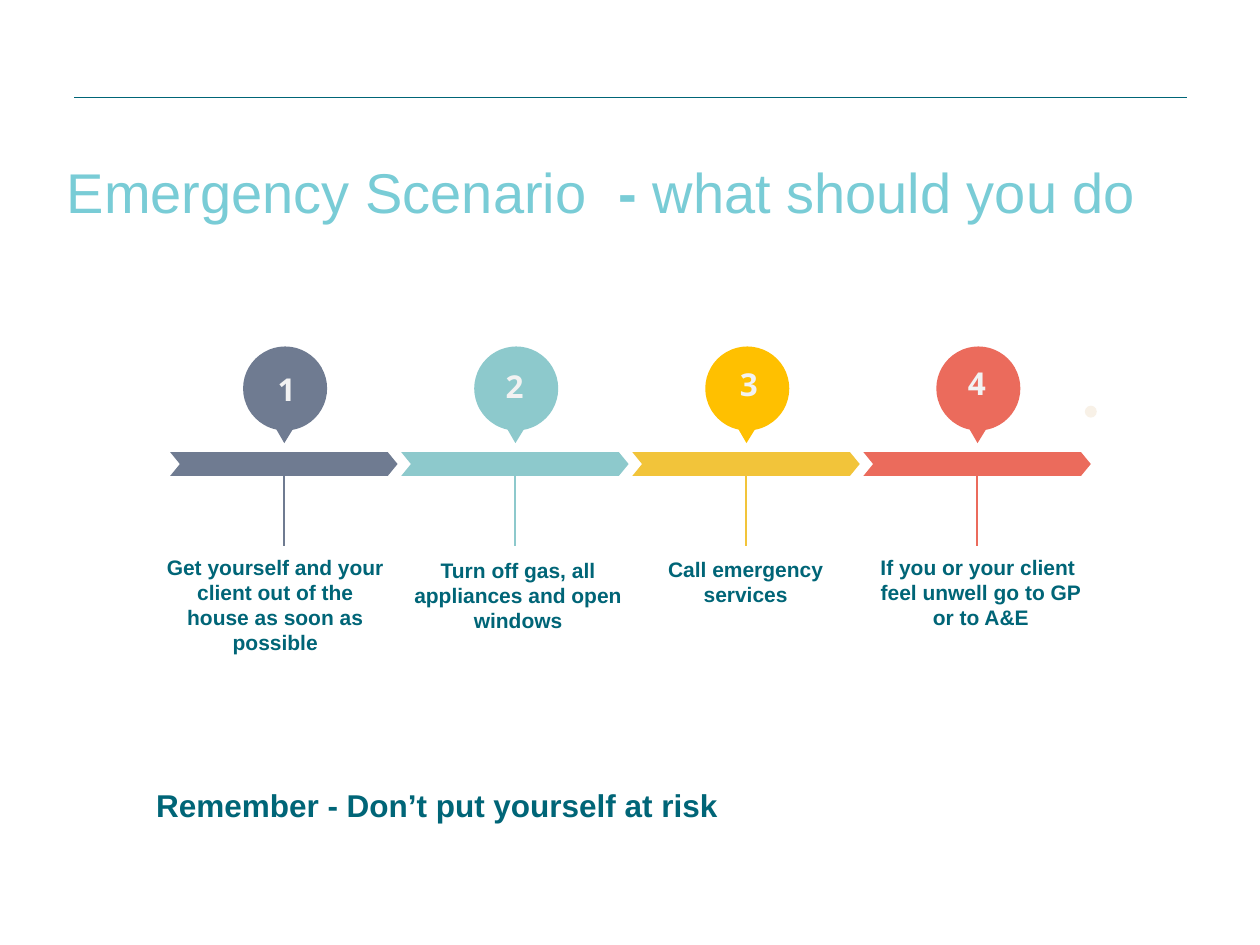
"""Build the emergency scenario slide: four numbered steps along a chevron timeline."""
from dataclasses import dataclass

from lxml import etree
from pptx import Presentation
from pptx import util as u
from pptx.dml.color import RGBColor
from pptx.enum import shapes, text
from pptx.oxml.ns import qn

SLATE = RGBColor(0x6F, 0x7B, 0x91)
AQUA = RGBColor(0x8D, 0xC9, 0xCC)
GOLD = RGBColor(0xF2, 0xC4, 0x3A)
AMBER = RGBColor(0xFF, 0xC0, 0x00)
CORAL = RGBColor(0xEB, 0x6B, 0x5C)
CREAM = RGBColor(0xF8, 0xF1, 0xE7)
TEAL = RGBColor(0x00, 0x65, 0x77)
SKY = RGBColor(0x79, 0xCC, 0xD6)
PALE = RGBColor(0xF2, 0xF2, 0xF2)

WIDTH, HEIGHT = u.Inches(10), u.Inches(7.5)
FIRST_COLUMN, COLUMN_PITCH, BAR_WIDTH = 13.5, 18.34, 18.05
PIN_SHIFT, PIN_SIZE, PIN_TOP = 5.8, 6.67, 36.67
BAR_TOP, BAR_MIDDLE, BAR_HEIGHT, STEM_END = 47.84, 49.1, 2.53, 57.73


@dataclass(frozen=True)
class Step:
    """One step; positions are percentages, horizontal ones from its column's left."""
    caption: str
    color: RGBColor
    pin_color: RGBColor
    number_shift: float
    number_top: float
    caption_shift: float
    caption_top: float
    caption_width: float


STEPS = [
    Step("Get yourself and your client out of the house as soon as possible",
         SLATE, SLATE, 5.8, 38.45, -0.85, 58, 18.4),
    Step("Turn off gas, all appliances and open windows",
         AQUA, AQUA, 5.55, 38.2, 0.08, 58.35, 18.4),
    Step("Call emergency services",
         GOLD, AMBER, 5.8, 38, -0.4, 58.27, 18.8),
    Step("If you or your client  feel unwell go to GP or to A&E",
         CORAL, CORAL, 5.55, 37.82, -0.08, 58, 18.8),
]


def across(percent: float) -> int:
    """Convert a percentage of the slide's width to a length."""
    return round(WIDTH * percent / 100)


def down(percent: float) -> int:
    """Convert a percentage of the slide's height to a length."""
    return round(HEIGHT * percent / 100)


def paint(shape, color: RGBColor) -> None:
    """Give a shape a flat fill without outline or shadow."""
    shape.fill.solid()
    shape.fill.fore_color.rgb = color
    shape.line.fill.background()
    shape.shadow.inherit = False


def draw_line(slide, left: float, top: float, right: float, bottom: float,
              color: RGBColor, points: float) -> None:
    """Draw a straight line without shadow."""
    line = slide.shapes.add_connector(shapes.MSO_CONNECTOR.STRAIGHT, across(left),
                                      down(top), across(right), down(bottom))
    line.line.color.rgb = color
    line.line.width = u.Pt(points)
    etree.SubElement(line._element.spPr, qn("a:effectLst"))


def format_text(frame, words: str, size: float, color: RGBColor, font: str,
                alignment: text.PP_ALIGN) -> None:
    """Fill a frame with one bold paragraph."""
    frame.text = words
    paragraph = frame.paragraphs[0]
    paragraph.alignment = alignment
    style = paragraph.runs[0].font
    style.name, style.size, style.bold = font, u.Pt(size), True
    style.color.rgb = color


def draw_label(slide, words: str, left: float, top: float, width: float, height: float,
               size: float, color: RGBColor, font: str = "Arial") -> None:
    """Write a centred label in an unfilled rectangle."""
    label = slide.shapes.add_shape(shapes.MSO_SHAPE.RECTANGLE, across(left), down(top),
                                   across(width), down(height))
    label.fill.background()
    label.line.fill.background()
    label.shadow.inherit = False
    frame = label.text_frame
    frame.word_wrap = True
    frame.vertical_anchor = text.MSO_ANCHOR.TOP
    frame.margin_left = frame.margin_right = u.Inches(0.05)
    frame.margin_top = frame.margin_bottom = u.Inches(0.05)
    format_text(frame, words, size, color, font, text.PP_ALIGN.CENTER)


def draw_pin(slide, left: float, color: RGBColor) -> None:
    """Draw a round pin whose tip points at the bar."""
    pin = slide.shapes.add_shape(shapes.MSO_SHAPE.OVAL_CALLOUT, across(left), down(PIN_TOP),
                                 across(PIN_SIZE), across(PIN_SIZE))
    pin.adjustments[0], pin.adjustments[1] = -0.01, 0.65
    paint(pin, color)


def draw_step(slide, index: int, step: Step) -> None:
    """Draw a step's stem, bar, caption, pin and number."""
    column = FIRST_COLUMN + index * COLUMN_PITCH
    middle = column + BAR_WIDTH / 2
    draw_line(slide, middle, BAR_MIDDLE, middle, STEM_END, step.color, 1.25)
    bar = slide.shapes.add_shape(shapes.MSO_SHAPE.CHEVRON, across(column), down(BAR_TOP),
                                 across(BAR_WIDTH), down(BAR_HEIGHT))
    bar.adjustments[0] = 0.41
    paint(bar, step.color)
    draw_label(slide, step.caption, column + step.caption_shift, step.caption_top,
               step.caption_width, 12, 12, TEAL)
    draw_pin(slide, column + PIN_SHIFT, step.pin_color)
    draw_label(slide, str(index + 1), column + step.number_shift, step.number_top,
               6.9, 5.73, 18, PALE, "Open Sans")


def write_title(slide) -> None:
    """Place the heading in the title placeholder."""
    title = slide.shapes.title
    title.left, title.top = across(5.3), down(14.53)
    title.width, title.height = across(89.5), down(11.33)
    frame = title.text_frame
    frame.margin_left = frame.margin_right = frame.margin_top = frame.margin_bottom = 0
    frame.vertical_anchor = text.MSO_ANCHOR.MIDDLE
    frame.auto_size = text.MSO_AUTO_SIZE.NONE
    heading = frame.paragraphs[0]
    heading.alignment = text.PP_ALIGN.LEFT
    for words, bold in (("Emergency Scenario  ", False), ("- ", True),
                        ("what should you do", False)):
        run = heading.add_run()
        run.text = words
        run.font.name, run.font.size, run.font.bold = "Arial", u.Pt(32), bold
        run.font.color.rgb = SKY


def write_reminder(slide) -> None:
    """Write the closing reminder on one line."""
    reminder = slide.shapes.add_textbox(across(11.4), down(82.53), across(47.2), down(5.33))
    reminder.text_frame.word_wrap = False
    format_text(reminder.text_frame, "Remember - Don’t put yourself at risk",
                18, TEAL, "Arial", text.PP_ALIGN.LEFT)


def main() -> None:
    """Build and save the slide."""
    deck = Presentation()
    deck.slide_width, deck.slide_height = WIDTH, HEIGHT
    slide = deck.slides.add_slide(deck.slide_layouts[5])
    draw_line(slide, 5.9, 10.27, 94.2, 10.27, TEAL, 0.5)
    write_title(slide)
    for index, step in enumerate(STEPS):
        draw_step(slide, index, step)
    dot = slide.shapes.add_shape(shapes.MSO_SHAPE.OVAL, across(86.1), down(42.93),
                                 across(0.95), across(0.95))
    paint(dot, CREAM)
    write_reminder(slide)
    deck.save("out.pptx")


if __name__ == "__main__":
    main()
